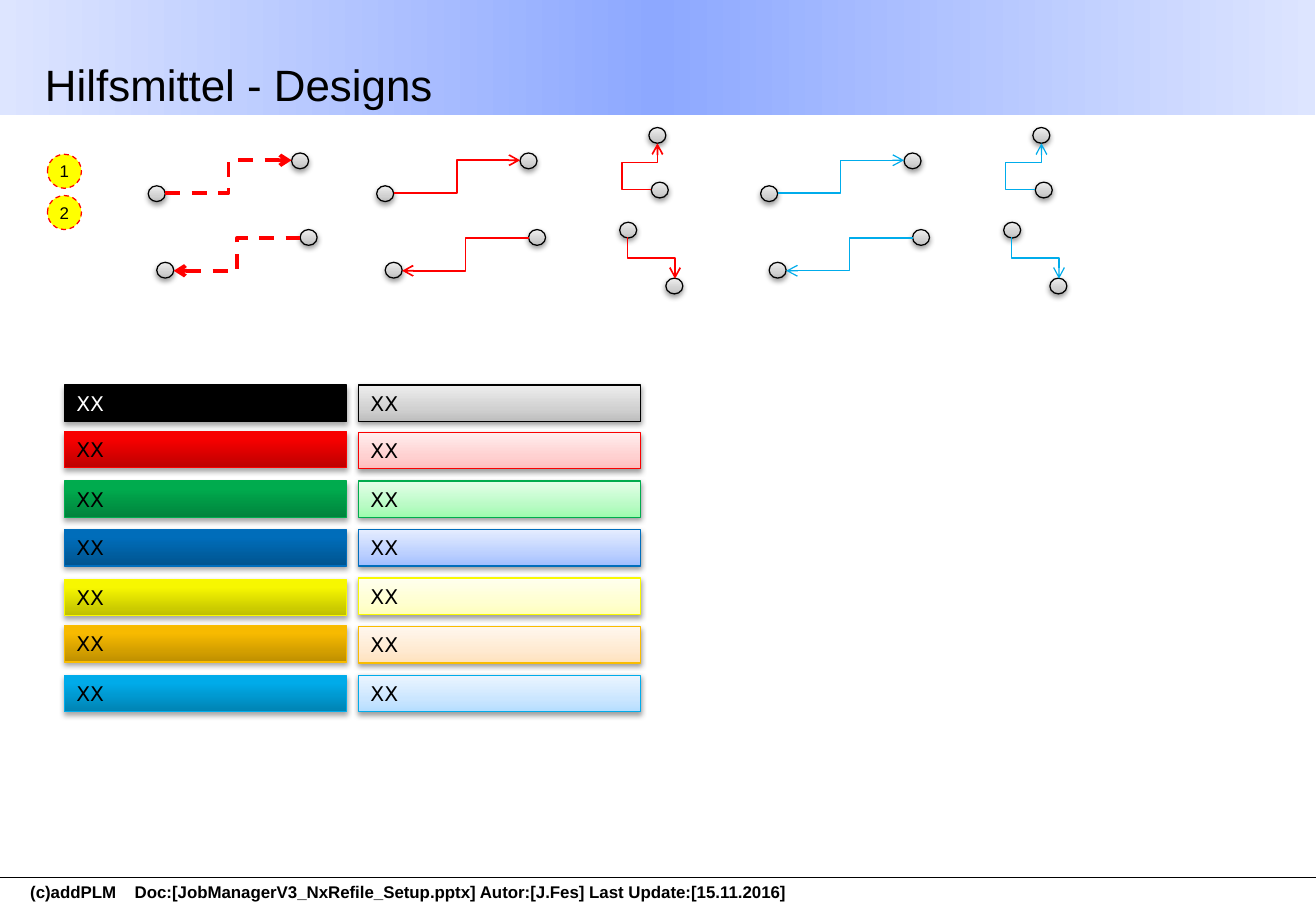
from copy import deepcopy

from pptx import Presentation, util as u
from pptx.dml.color import RGBColor
from pptx.enum import dml, shapes, text
from pptx.oxml import parse_xml
from pptx.oxml.ns import nsdecls, qn

PX = 9144  # EMU per px, 100 px to the inch

BLACK = RGBColor(0x00, 0x00, 0x00)
WHITE = RGBColor(0xFF, 0xFF, 0xFF)
RED = RGBColor(0xFF, 0x00, 0x00)
YELLOW = RGBColor(0xFF, 0xFF, 0x00)
CYAN = RGBColor(0x00, 0xAC, 0xEB)
HEADER_EDGE = RGBColor(0xDD, 0xE5, 0xFF)
HEADER_MIDDLE = RGBColor(0x8D, 0xA8, 0xFF)
GREYS = [RGBColor.from_string(c) for c in ("BDBDBD", "D1D1D1", "EEEEEE")]

# Line colour, dark gradient and light gradient of each pair of bars
BAR_COLOURS = [
    ("000000", None, "BDBDBD D1D1D1 EEEEEE"),
    ("F90000", "BE0000 F70000 F80000", "FFBDBD FFD1D1 FFEEEE"),
    ("00AC4E", "00833C 00AB4E 00AB4E", "9DFCAE BBFBC6 E4FFE9"),
    ("006EBC", "00548F 006DBA 006DBB", "A0BEFF BCD0FF E5EDFF"),
    ("F9F900", "BEBE00 F7F700 F8F800", "FFFFBD FFFFD1 FFFFEE"),
    ("F9BC00", "BE8F00 F7BA00 F8BB00", "FFE2BD FFEAD1 FFF7EE"),
    ("00ACEB", "0083B3 00ABE9 00ABEA", "B5DDFF CBE6FF EBF5FF"),
]
DARK_NUDGES = (1, -1, 0, 0, 1, -1, 0)
LIGHT_NUDGES = (1, 0, 0, 0, 0, 0, 0)


def emu(*lengths):
    return [u.Emu(length * PX) for length in lengths]


def add_box(page, kind, box):
    shape = page.shapes.add_shape(kind, *emu(*box))
    shape.shadow.inherit = False
    return shape


def set_gradient(shape, colours, middle, angle):
    shape.fill.gradient()
    shape.fill.gradient_angle = angle
    stop_list = shape._element.spPr.find(qn("a:gradFill")).find(qn("a:gsLst"))
    stop_list.append(deepcopy(stop_list[-1]))
    for stop, colour, place in zip(shape.fill.gradient_stops, colours, (0, middle, 1)):
        stop.color.rgb = colour
        stop.position = place


def set_line(shape, colour, width, dashed=False):
    shape.line.color.rgb = colour
    shape.line.width = u.Pt(width)
    if dashed:
        shape.line.dash_style = dml.MSO_LINE.DASH


def add_shadow(shape, distance, opacity):
    effects = shape._element.spPr.find(qn("a:effectLst"))
    effects.append(parse_xml(
        f'<a:outerShdw {nsdecls("a")} blurRad="40000" dist="{distance}" dir="5400000" '
        f'rotWithShape="0"><a:srgbClr val="000000"><a:alpha val="{opacity * 1000}"/>'
        f'</a:srgbClr></a:outerShdw>'))


def write(para, words, size, font, colour, bold=False):
    span = para.add_run()
    span.text = words
    span.font.size = u.Pt(size)
    span.font.name = font
    span.font.color.rgb = colour
    span.font.bold = bold


def add_line(page, kind, start, end, colour, width, dashed=False):
    line = page.shapes.add_connector(kind, *emu(*start, *end))
    set_line(line, colour, width, dashed)
    line._element.spPr.append(parse_xml(f'<a:effectLst {nsdecls("a")}/>'))
    return line


def draw_header(page, box):
    left, top, width, height = box
    band = add_box(page, shapes.MSO_SHAPE.RECTANGLE, box)
    set_gradient(band, (HEADER_EDGE, HEADER_MIDDLE, HEADER_EDGE), 0.5, 0)
    band.line.fill.background()

    title = page.shapes.title
    page.shapes._spTree.append(title._element)  # in front of the band
    title.left, title.top, title.width, title.height = emu(
        left + 27, top + 45, width - 55, height - 46)
    frame = title.text_frame
    frame.auto_size = text.MSO_AUTO_SIZE.NONE
    frame.word_wrap = True
    frame.vertical_anchor = text.MSO_ANCHOR.MIDDLE
    frame.margin_left, frame.margin_top, frame.margin_right, frame.margin_bottom = emu(
        10, 0, 10, 0)
    para = frame.paragraphs[0]
    para.alignment = text.PP_ALIGN.LEFT
    write(para, "Hilfsmittel - Designs", 26, "Arial", BLACK)


def draw_footer(page, box):
    left, top, width, height = box
    add_line(page, shapes.MSO_CONNECTOR.STRAIGHT, (left, top + 1), (left + width, top + 1),
             BLACK, 0.5)
    note = page.shapes.add_textbox(*emu(left + 15, top, 799, height))
    note.text_frame.word_wrap = True
    note.text_frame.auto_size = text.MSO_AUTO_SIZE.SHAPE_TO_FIT_TEXT
    para = note.text_frame.paragraphs[0]
    para._p.get_or_add_pPr().append(parse_xml(
        f'<a:tabLst {nsdecls("a")}><a:tab pos="{86 * PX}" algn="l"/></a:tabLst>'))
    write(para, "(c)addPLM\tDoc:[JobManagerV3_NxRefile_Setup.pptx] Autor:[J.Fes] "
          "Last Update:[15.11.2016]", 10, "Arial", BLACK, bold=True)


def draw_badge(page, box, number):
    badge = add_box(page, shapes.MSO_SHAPE.OVAL, box)
    badge.fill.solid()
    badge.fill.fore_color.rgb = YELLOW
    set_line(badge, RED, 0.75, dashed=True)
    frame = badge.text_frame
    frame.word_wrap = False
    frame.vertical_anchor = text.MSO_ANCHOR.MIDDLE
    frame.paragraphs[0].alignment = text.PP_ALIGN.CENTER
    write(frame.paragraphs[0], str(number), 10, "Arial", BLACK)


def draw_bar(page, box, line_colour, gradient, middle, shadow):
    bar = add_box(page, shapes.MSO_SHAPE.RECTANGLE, box)
    if gradient:
        set_gradient(bar, [RGBColor.from_string(c) for c in gradient.split()], middle, 90)
    else:
        bar.fill.solid()
        bar.fill.fore_color.rgb = BLACK
    set_line(bar, RGBColor.from_string(line_colour), 0.75)
    add_shadow(bar, *shadow)
    frame = bar.text_frame
    frame.word_wrap = True
    frame.auto_size = text.MSO_AUTO_SIZE.SHAPE_TO_FIT_TEXT
    frame.vertical_anchor = text.MSO_ANCHOR.TOP
    frame.paragraphs[0].alignment = text.PP_ALIGN.LEFT
    write(frame.paragraphs[0], "XX", 12, "DejaVu Sans", BLACK if gradient else WHITE)


def draw_palette(page, left, top):
    for row, (line_colour, dark, light) in enumerate(BAR_COLOURS):
        y = top + 40 * row
        draw_bar(page, (left, y + DARK_NUDGES[row], 232, 30), line_colour, dark,
                 0.8, (23000, 35))
        draw_bar(page, (left + 242, y + LIGHT_NUDGES[row], 232, 30), line_colour, light,
                 0.35, (20000, 38))


def draw_links(page, left, top, colour, width, dashed=False, upright=True):
    """Pairs of nodes joined by elbow arrows: two lying, then two upright."""
    nodes = [(0, 48), (118, 21), (7, 111), (125, 84)]
    # Start, end, arrow side, rotation, preset and its adjustments
    links = [((14, 54), (118, 27), "tailEnd", 0, None, ()),
             ((21, 118), (125, 91), "headEnd", 0, None, ())]
    if upright:
        nodes += [(226, 45), (224, 0), (238, 124), (200, 78)]
        links += [((231, 13), (226, 51), "tailEnd", 180, "bentConnector4", (-487700, 58500)),
                  ((209, 127), (243, 88), "headEnd", 270, None, ())]
    for x, y in nodes:
        node = add_box(page, shapes.MSO_SHAPE.FLOWCHART_CONNECTOR, (left + x, top + y, 14, 13))
        set_gradient(node, GREYS, 0.35, 90)
        set_line(node, BLACK, 0.75)
        add_shadow(node, 20000, 38)
    for (x1, y1), (x2, y2), side, rotation, preset, adjustments in links:
        link = add_line(page, shapes.MSO_CONNECTOR.ELBOW, (left + x1, top + y1),
                        (left + x2, top + y2), colour, width, dashed)
        link.line._get_or_add_ln().append(
            parse_xml(f'<a:{side} {nsdecls("a")} type="arrow"/>'))
        properties = link._element.spPr
        properties.find(qn("a:xfrm")).set("rot", str(rotation * 60000))
        if preset:
            guides = "".join(f'<a:gd name="adj{i}" fmla="val {value}"/>'
                             for i, value in enumerate(adjustments, 1))
            properties.replace(properties.find(qn("a:prstGeom")), parse_xml(
                f'<a:prstGeom {nsdecls("a")} prst="{preset}"><a:avLst>{guides}</a:avLst>'
                f'</a:prstGeom>'))


def main():
    deck = Presentation()
    deck.slide_width, deck.slide_height = emu(1083, 750)
    page = deck.slides.add_slide(deck.slide_layouts[5])

    # Frame of the page
    draw_header(page, (0, 0, 1082, 95))
    draw_footer(page, (0, 721, 1083, 27))

    # Colour bars, numbered badges and arrows
    draw_palette(page, 53, 316)
    for number in (1, 2):
        draw_badge(page, (39, 93 + 34 * number, 28, 28), number)
    draw_links(page, 122, 105, RED, 2.25, dashed=True, upright=False)
    draw_links(page, 310, 105, RED, 1)
    draw_links(page, 626, 105, CYAN, 0.75)

    deck.save("out.pptx")


if __name__ == "__main__":
    main()
